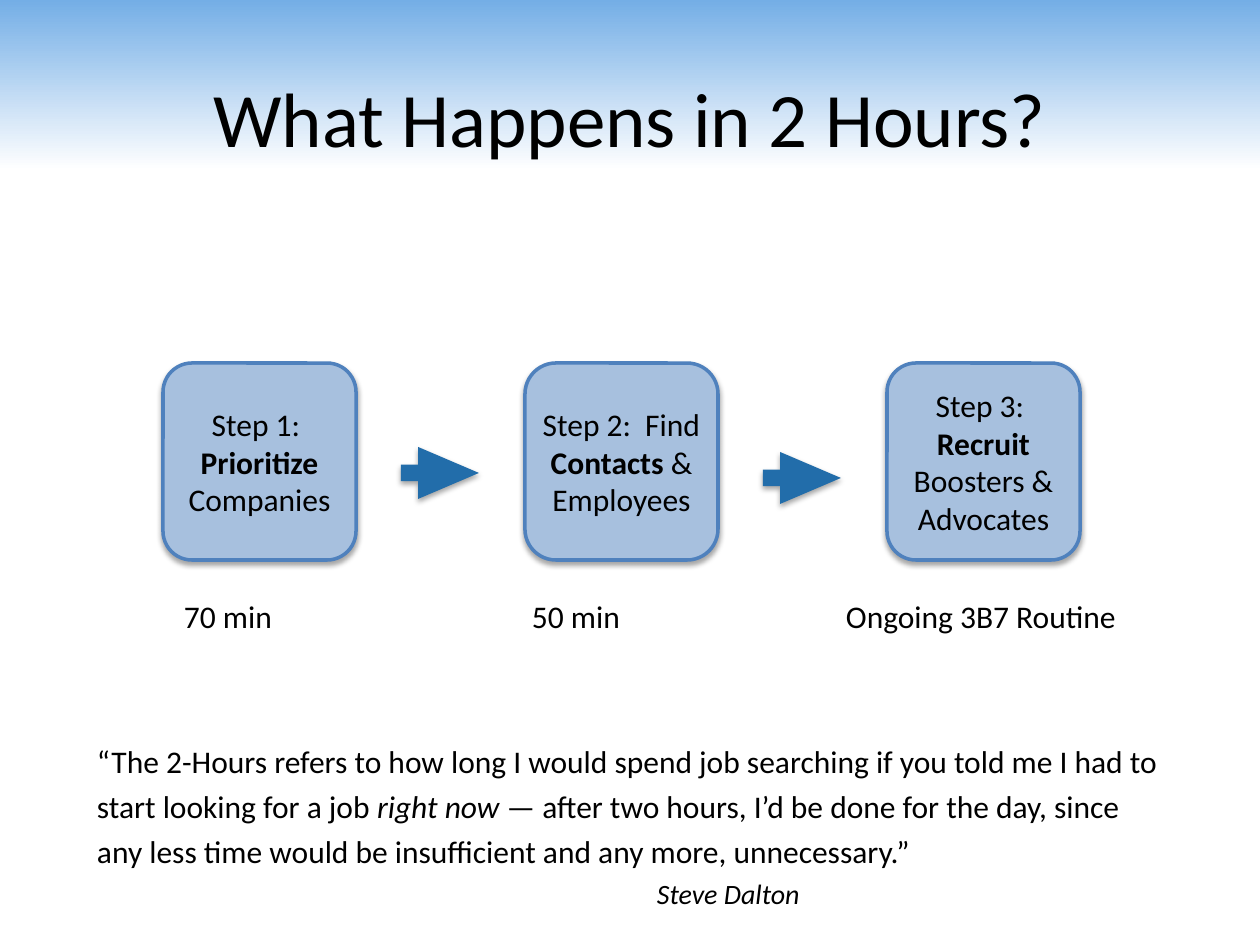
"""Build the slide on what happens in the two-hour job search."""
from lxml import etree
from pptx import Presentation
from pptx.dml.color import RGBColor
from pptx.enum.shapes import MSO_SHAPE
from pptx.enum.text import MSO_ANCHOR, PP_ALIGN
from pptx.oxml.ns import qn
from pptx.util import Pt

ROUND, ARROW = MSO_SHAPE.ROUNDED_RECTANGLE, MSO_SHAPE.RIGHT_ARROW
TOP, MIDDLE = MSO_ANCHOR.TOP, MSO_ANCHOR.MIDDLE
LEFT, CENTER = PP_ALIGN.LEFT, PP_ALIGN.CENTER
SCALE = 914400 / 126
FONT = "Calibri"

TITLE = "What Happens in 2 Hours?"
STEPS = [
    {"runs": [("Step 1:  ", ""), ("Prioritize", "b"), (" Companies", "")],
     "round": 0.15, "time": "70 min", "left": 178, "width": 100},
    {"runs": [("Step 2:  Find ", ""), ("Contacts", "b"), (" & Employees", "")],
     "round": 0.16, "time": "50 min", "left": 526, "width": 100},
    {"runs": [("Step 3:  ", ""), ("Recruit", "b"), (" Boosters & Advocates", "")],
     "round": 0.15, "time": "Ongoing 3B7 Routine", "left": 840, "width": 305},
]
ARROW_TOPS = [447, 452]
QUOTE = [
    ("“The 2-Hours refers to how long I would spend job searching if you told "
     "me I had to start looking for a job ", ""),
    ("right now", "i"),
    (" — after two hours, I’d be done for the day, since any less time would be "
     "insufficient and any more, unnecessary.”", ""),
]
AUTHOR = [("Steve Dalton", "i")]

BOX_LEFT, BOX_TOP, BOX_W, BOX_H, PITCH = 163, 363, 193, 197, 362
ARROW_LEFT, ARROW_W, ARROW_H = 401, 78, 52


def px(*vals):
    return [round(val * SCALE) for val in vals]


def color(code):
    return RGBColor.from_string(code)


def write(frame, runs, size=18, align=LEFT, anchor=TOP, wrap=True,
          space=1.0, indent=0, more=False):
    frame.word_wrap = wrap
    frame.vertical_anchor = anchor
    frame.margin_left = frame.margin_right = px(6)[0]
    frame.margin_top = frame.margin_bottom = px(6)[0]
    para = frame.add_paragraph() if more else frame.paragraphs[0]
    para.alignment = align
    para.line_spacing = space
    if indent:
        para._p.get_or_add_pPr().set("marL", str(px(indent)[0]))
    for text, style in runs:
        run = para.add_run()
        run.text = text
        font = run.font
        font.name, font.size = FONT, Pt(size)
        font.bold, font.italic = "b" in style, "i" in style
        font.color.rgb = color("000000")


def shade(shape):
    shape.shadow.inherit = False
    effects = shape._element.spPr.find(qn("a:effectLst"))
    outer = etree.SubElement(effects, qn("a:outerShdw"), blurRad="38100",
                             dist="23000", dir="5400000", rotWithShape="0")
    tint = etree.SubElement(outer, qn("a:srgbClr"), val="000000")
    etree.SubElement(tint, qn("a:alpha"), val="35000")


def draw(slide, kind, box, fill, line=None, adjust=()):
    shape = slide.shapes.add_shape(kind, *px(*box))
    for i, val in enumerate(adjust):
        shape.adjustments[i] = val
    shape.fill.solid()
    shape.fill.fore_color.rgb = color(fill)
    if line:
        shape.line.color.rgb = color(line)
        shape.line.width = Pt(2)
    else:
        shape.line.fill.background()
    shade(shape)
    return shape


def paint(slide):
    fill = slide.background.fill
    fill.gradient()
    fill.gradient_angle = 90
    stops = [(0.82, "FFFFFF"), (1.0, "74AEE6")]
    for stop, (place, code) in zip(fill.gradient_stops, stops):
        stop.position = place
        stop.color.rgb = color(code)


def main():
    deck = Presentation()
    deck.slide_width, deck.slide_height = px(1260, 945)
    slide = deck.slides.add_slide(deck.slide_layouts[5])
    paint(slide)

    title = slide.shapes.title
    title.left, title.top, title.width, title.height = px(63, 38, 1134, 158)
    write(title.text_frame, [(TITLE, "")], size=44, align=CENTER, anchor=MIDDLE)

    quote = slide.shapes.add_textbox(*px(91, 728, 1079, 216)).text_frame
    write(quote, QUOTE, space=1.2)
    write(quote, AUTHOR, size=16, space=1.2, indent=560, more=True)

    for i, step in enumerate(STEPS):
        box = (BOX_LEFT + i * PITCH, BOX_TOP, BOX_W, BOX_H)
        card = draw(slide, ROUND, box, "A7C0DE", "4F81BD", [step["round"]])
        write(card.text_frame, step["runs"], align=CENTER, anchor=MIDDLE)
        note = slide.shapes.add_textbox(*px(step["left"], 591, step["width"], 49))
        write(note.text_frame, [(step["time"], "")], wrap=False)

    for i, top in enumerate(ARROW_TOPS):
        box = (ARROW_LEFT + i * PITCH, top, ARROW_W, ARROW_H)
        draw(slide, ARROW, box, "226DAA", adjust=[0.32, 1.17])

    deck.save("out.pptx")


if __name__ == "__main__":
    main()
